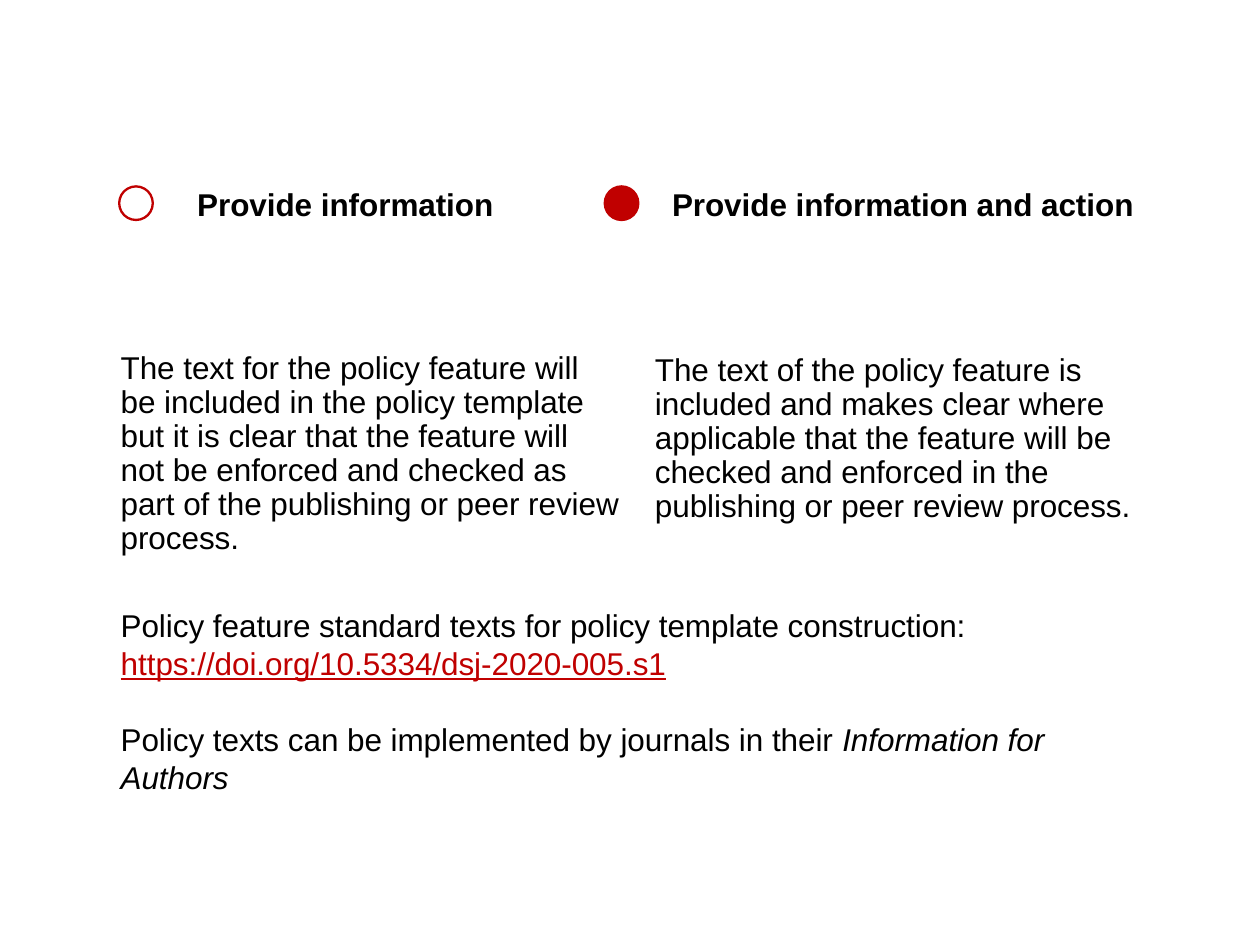
from dataclasses import dataclass

from pptx import Presentation
from pptx import util as u
from pptx.dml.color import RGBColor
from pptx.enum import shapes, text

COLORS = {"black": "000000", "red": "C00000", "white": "FFFFFF"}
FONT = {"name": "Arial", "size": u.Pt(13.5)}


@dataclass
class Run:
    text: str
    color: str = "black"
    bold: bool = False
    italic: bool = False
    underline: bool = False


@dataclass
class TextBlock:
    left: float
    top: float
    width: float
    height: float
    paragraphs: list[list[Run]]
    align: text.PP_ALIGN = text.PP_ALIGN.LEFT
    anchor: text.MSO_ANCHOR = text.MSO_ANCHOR.TOP
    inset_left: float = 0.1
    inset_right: float = 0.1
    line_spacing: float = 0.9
    gap: float = 0


@dataclass
class Marker:
    left: float
    fill: str


def rgb(name: str) -> RGBColor:
    return RGBColor.from_string(COLORS[name])


def add_text(s, block: TextBlock) -> None:
    sp = s.shapes.add_textbox(*map(u.Inches, (block.left, block.top, block.width, block.height)))
    tf = sp.text_frame
    frame_format = {
        "word_wrap": True,
        "vertical_anchor": block.anchor,
        "margin_left": u.Inches(block.inset_left),
        "margin_right": u.Inches(block.inset_right),
    }
    for key, value in frame_format.items():
        setattr(tf, key, value)
    for i, runs in enumerate(block.paragraphs):
        p = tf.add_paragraph() if i else tf.paragraphs[0]
        p.alignment = block.align
        p.line_spacing = block.line_spacing
        p.space_before = u.Pt(block.gap if i else 0)
        for run in runs:
            r = p.add_run()
            r.text = run.text
            style = {"bold": run.bold, "italic": run.italic, "underline": run.underline}
            for key, value in (FONT | style).items():
                setattr(r.font, key, value)
            r.font.color.rgb = rgb(run.color)


def add_marker(s, marker: Marker) -> None:
    sp = s.shapes.add_shape(shapes.MSO_SHAPE.OVAL, u.Inches(marker.left), u.Inches(1.11),
                            u.Inches(0.2), u.Inches(0.2))
    sp.shadow.inherit = False
    sp.fill.solid()
    sp.fill.fore_color.rgb = rgb(marker.fill)
    sp.line.color.rgb = rgb("red")
    sp.line.width = u.Pt(1)


BLOCKS = [
    # Column headings
    TextBlock(0.52, 0.7, 3.17, 0.68, [[Run("Provide information", bold=True)]],
              align=text.PP_ALIGN.CENTER, anchor=text.MSO_ANCHOR.BOTTOM, inset_left=0),
    TextBlock(3.69, 0.7, 3.19, 0.68, [[Run("Provide information and action", bold=True)]],
              anchor=text.MSO_ANCHOR.BOTTOM, inset_left=0.31, inset_right=0.05),
    # Column explanations
    TextBlock(0.62, 2.05, 3.17, 1.62, [[Run(
        "The text for the policy feature will be included in the policy template but it is "
        "clear that the feature will not be enforced and checked as part of the publishing "
        "or peer review process.")]]),
    TextBlock(3.8, 2.06, 3.19, 1.31, [[Run(
        "The text of the policy feature is included and makes clear where applicable that the "
        "feature will be checked and enforced in the publishing or peer review process.")]]),
    # Source and use of the texts
    TextBlock(0.62, 3.56, 5.71, 1.24, [
        [Run("Policy feature standard texts for policy template construction: "),
         Run("https://doi.org/10.5334/dsj-2020-005.s1", color="red", underline=True)],
        [Run("Policy texts can be implemented by journals in their "),
         Run("Information for Authors", italic=True)],
    ], line_spacing=1.0, gap=16.3),
]
MARKERS = [Marker(0.71, "white"), Marker(3.6, "red")]


def main() -> None:
    prs = Presentation()
    # Slide in 4:3 format
    prs.slide_width = u.Inches(7.5)
    prs.slide_height = prs.slide_width * 3 // 4
    s = prs.slides.add_slide(prs.slide_layouts[6])
    for block in BLOCKS:
        add_text(s, block)
    for marker in MARKERS:
        add_marker(s, marker)
    prs.save("out.pptx")


if __name__ == "__main__":
    main()
